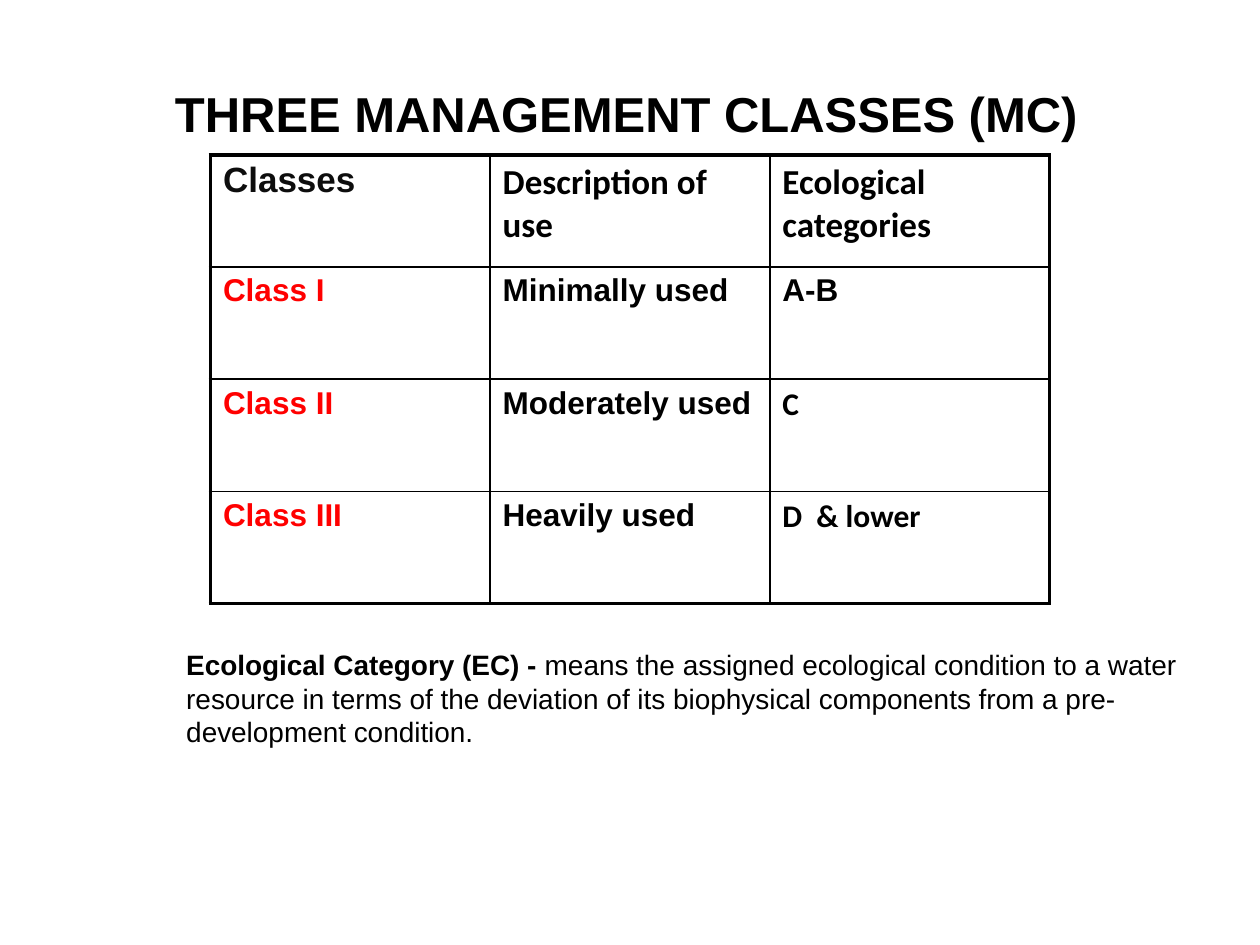
from lxml import etree
from pptx import Presentation
from pptx import util as u
from pptx.dml.color import RGBColor
from pptx.enum import text
from pptx.oxml import ns

COLORS = {"ink": "000000", "heading": "0D0D0D", "class": "FF0000"}
OUTER, INNER = 2.25, 1
COLUMN_WIDTH, ROW_HEIGHT = 2.22, 0.89
CLASSES = [
    ["Classes", "Description of use", "Ecological categories"],
    ["Class I", "Minimally used", "A-B"],
    ["Class II", "Moderately used", "C"],
    ["Class III", "Heavily used", "D  & lower"],
]
CALIBRI_CELLS = {(0, 1), (0, 2), (2, 2), (3, 2)}


def style(run, size, color="ink", name="Arial", bold=True):
    run.font.size = u.Pt(size)
    run.font.name = name
    run.font.bold = bold
    run.font.color.rgb = RGBColor.from_string(COLORS[color])


def add_title(slide, words):
    title = slide.shapes.title
    title.left, title.top = u.Inches(0.72), u.Inches(0.6)
    title.width, title.height = u.Inches(8.5), u.Inches(0.58)
    frame = title.text_frame
    frame.text = words
    frame.auto_size = text.MSO_AUTO_SIZE.NONE
    frame.vertical_anchor = text.MSO_ANCHOR.BOTTOM
    heading = frame.paragraphs[0]
    heading.alignment = text.PP_ALIGN.CENTER
    heading.line_spacing = 1.0
    style(heading.runs[0], 28)


def set_borders(cell, widths):
    properties = cell._tc.get_or_add_tcPr()
    for position, (side, width) in enumerate(widths.items()):
        line = etree.Element(ns.qn(f"a:ln{side}"), w=str(u.Pt(width)))
        fill = etree.SubElement(line, ns.qn("a:solidFill"))
        etree.SubElement(fill, ns.qn("a:srgbClr"), val=COLORS["ink"])
        properties.insert(position, line)


def add_class_table(slide):
    last_row, last_column = len(CLASSES) - 1, len(CLASSES[0]) - 1
    table = slide.shapes.add_table(
        len(CLASSES), len(CLASSES[0]), u.Inches(1.67), u.Inches(1.23),
        u.Inches(COLUMN_WIDTH * len(CLASSES[0])), u.Inches(ROW_HEIGHT * len(CLASSES)),
    ).table
    table.first_row = table.horz_banding = False
    for column in table.columns:
        column.width = u.Inches(COLUMN_WIDTH)
    for r, entries in enumerate(CLASSES):
        table.rows[r].height = u.Inches(ROW_HEIGHT)
        for c, entry in enumerate(entries):
            cell = table.cell(r, c)
            cell.text = entry
            cell.fill.background()
            color = "ink" if c else "class" if r else "heading"
            name = "Calibri" if (r, c) in CALIBRI_CELLS else "Arial"
            style(cell.text_frame.paragraphs[0].runs[0], 18 if r else 20, color, name)
            set_borders(cell, {
                "L": OUTER if c == 0 else INNER,
                "R": OUTER if c == last_column else INNER,
                "T": OUTER if r == 0 else INNER,
                "B": OUTER if r == last_row else INNER,
            })


def add_definition(slide, term, meaning):
    frame = slide.shapes.add_textbox(
        u.Inches(1.38), u.Inches(5.09), u.Inches(8.5), u.Inches(0.58)
    ).text_frame
    frame.word_wrap = True
    definition = frame.paragraphs[0]
    for words, bold in ((term, True), (meaning, False)):
        run = definition.add_run()
        run.text = words
        style(run, 16, bold=bold)


def main():
    deck = Presentation()
    deck.slide_width, deck.slide_height = u.Inches(10), u.Inches(7.5)
    slide = deck.slides.add_slide(deck.slide_layouts[5])
    add_title(slide, "THREE MANAGEMENT CLASSES (MC)")
    add_class_table(slide)
    add_definition(
        slide,
        "Ecological Category (EC) - ",
        "means the assigned ecological condition to a water resource in terms of "
        "the deviation of its biophysical components from a pre-development condition.",
    )
    deck.save("out.pptx")


if __name__ == "__main__":
    main()
